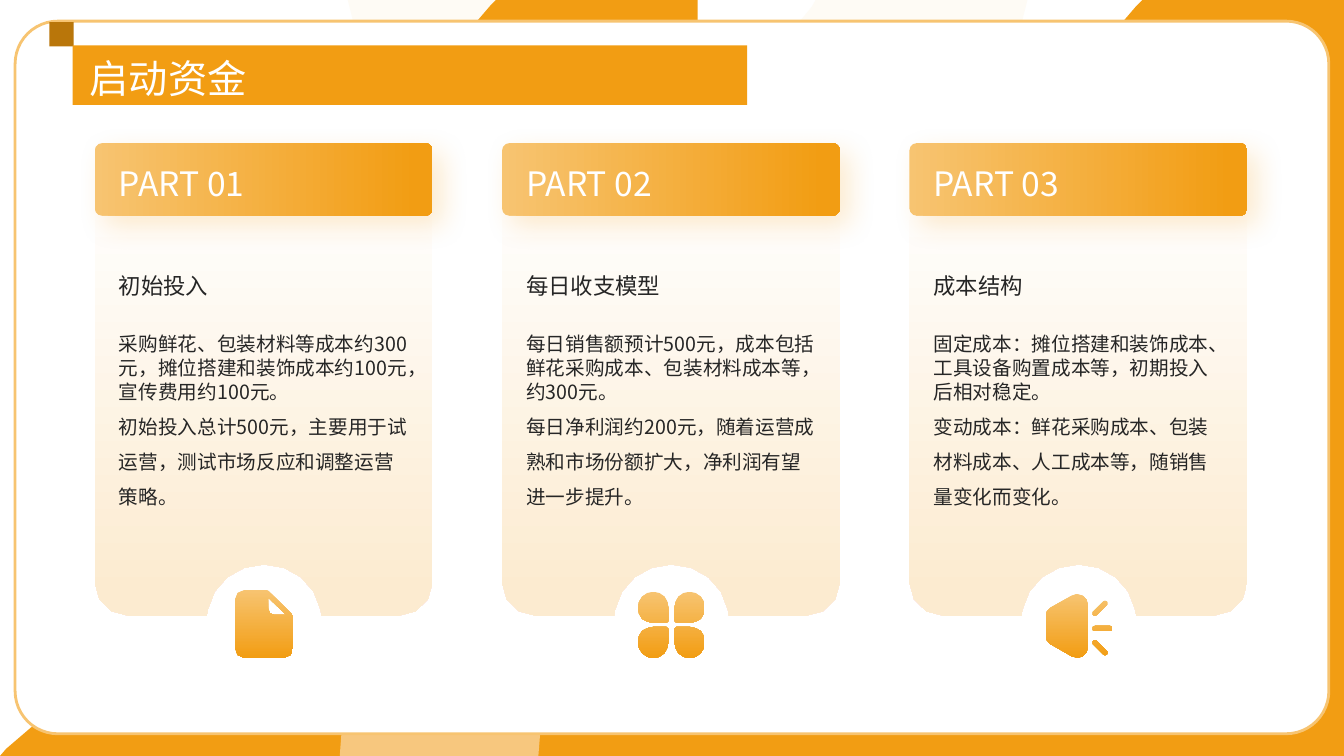
"""Build the start-up funding slide with three illustrated cards."""
import math
from dataclasses import dataclass

from lxml import etree
from pptx import Presentation
from pptx import util as u
from pptx.dml.color import RGBColor
from pptx.enum import shapes, text
from pptx.oxml.ns import qn

Contour = list[tuple[float, ...]]


@dataclass(frozen=True)
class Theme:
    font: str = "Noto Sans CJK SC"
    orange: str = "F29D13"
    amber: str = "F7C471"
    cream: str = "FCEBD0"
    mist: str = "FEFBF5"
    peach: str = "F7C77E"
    brown: str = "B9760A"
    white: str = "FFFFFF"
    ink: str = "262626"
    title: float = 28
    label: float = 24
    heading: float = 16
    body: float = 14


@dataclass(frozen=True)
class Card:
    label: str
    heading: str
    body: tuple[str, str]
    icon: list[Contour]


T = Theme()
CARD_LEFT, CARD_PITCH, CARD_W = 0.94, 4.04, 3.35
BAND_PITCH = 6.41

BAND_BOTTOM: Contour = [
    (3.75, 5.9), (4.92, 5.9, 6, 6.29, 6.87, 6.94), (6.92, 6.97), (6.92, 7.5),
    (0, 7.5), (0.06, 7.43), (1, 6.49, 2.31, 5.9, 3.75, 5.9)]
BAND_SIDE: Contour = [
    (4.92, 0), (6.92, 0), (6.92, 7.5), (4.92, 7.5), (4.86, 7.44),
    (3.92, 6.5, 3.33, 5.19, 3.33, 3.75), (3.33, 2.31, 3.92, 1, 4.86, 0.06)]
ARC_TOP: Contour = [
    (3.45, 0), (5.55, 0), (5.59, 0.07), (5.78, 0.3),
    (6.35, 0.87, 7.28, 0.87, 7.86, 0.3), (8.05, 0.07),
    (8.09, 0), (10.19, 0), (10.13, 0.24), (9.97, 0.77, 9.68, 1.28, 9.26, 1.7),
    (7.91, 3.05, 5.73, 3.05, 4.38, 1.7), (3.96, 1.28, 3.67, 0.77, 3.51, 0.24)]
ARC_BOTTOM: Contour = [
    (6.82, 4.05), (7.7, 4.05, 8.59, 4.38, 9.26, 5.06),
    (9.93, 5.73, 10.27, 6.62, 10.27, 7.5), (8.29, 7.5),
    (8.29, 7.12, 8.15, 6.75, 7.86, 6.46), (7.28, 5.88, 6.35, 5.88, 5.78, 6.46),
    (5.49, 6.75, 5.34, 7.12, 5.34, 7.5), (3.37, 7.5),
    (3.37, 6.62, 3.7, 5.73, 4.38, 5.06), (5.05, 4.38, 5.93, 4.05, 6.82, 4.05)]
PANEL: Contour = [
    (0.34, 1.85), (3.01, 1.85), (3.2, 1.85, 3.35, 2, 3.35, 2.18), (3.35, 5.78),
    (3.35, 5.96, 3.2, 6.11, 3.01, 6.11), (2.25, 6.11), (2.24, 6.05),
    (2.19, 5.79, 1.96, 5.6, 1.68, 5.6), (1.4, 5.6, 1.17, 5.79, 1.12, 6.05),
    (1.11, 6.11), (0.34, 6.11), (0.15, 6.11, 0, 5.96, 0, 5.78), (0, 2.18),
    (0, 2, 0.15, 1.85, 0.34, 1.85)]
FILE: list[Contour] = [
    [(1.72, 5.93), (1.72, 6.04), (1.72, 6.08, 1.75, 6.1, 1.78, 6.1), (1.9, 6.1)],
    [(1.49, 5.85), (1.7, 5.85), (1.72, 5.86), (1.97, 6.11), (1.97, 6.42),
     (1.97, 6.48, 1.93, 6.53, 1.87, 6.53), (1.49, 6.53),
     (1.43, 6.53, 1.39, 6.48, 1.39, 6.42), (1.39, 5.96),
     (1.39, 5.9, 1.43, 5.85, 1.49, 5.85)]]
PETAL: Contour = [
    (0.05, 0.02), (0.18, 0.02), (0.22, 0.02, 0.26, 0.04, 0.29, 0.06),
    (0.32, 0.09, 0.33, 0.13, 0.33, 0.17), (0.33, 0.21, 0.32, 0.25, 0.29, 0.28),
    (0.26, 0.31, 0.22, 0.33, 0.18, 0.33), (0.14, 0.33, 0.1, 0.31, 0.07, 0.28),
    (0.05, 0.25, 0.03, 0.21, 0.03, 0.17), (0.03, 0.04)]
RAY: Contour = [
    (0.2, -0.27), (0.22, -0.26), (0.22, -0.23), (0.12, -0.13), (0.1, -0.12),
    (0.08, -0.13), (0.08, -0.16), (0.18, -0.26)]
MIDDLE_RAY: Contour = [
    (1.84, 6.21), (1.99, 6.21), (2.01, 6.22), (2.01, 6.25), (1.99, 6.26),
    (1.84, 6.26), (1.82, 6.25), (1.82, 6.22)]
HORN: Contour = [
    (1.66, 5.89), (1.72, 5.91), (1.75, 5.93, 1.77, 5.96, 1.77, 6), (1.77, 6.42),
    (1.77, 6.46, 1.75, 6.49, 1.72, 6.51), (1.69, 6.53, 1.65, 6.53, 1.61, 6.51),
    (1.4, 6.39), (1.37, 6.37, 1.35, 6.34, 1.35, 6.3), (1.35, 6.12),
    (1.35, 6.08, 1.37, 6.05, 1.4, 6.03), (1.61, 5.91)]


def place(contour: Contour, dx: float, dy: float = 0, sx: int = 1, sy: int = 1) -> Contour:
    """Mirror a contour by its signs, then shift it."""
    return [tuple(v * sy + dy if i % 2 else v * sx + dx for i, v in enumerate(seg))
            for seg in contour]


CLOVER = [place(PETAL, 1.68, 6.2, sx, sy) for sx in (-1, 1) for sy in (-1, 1)]
SPEAKER = [HORN, MIDDLE_RAY] + [place(RAY, 1.74, 6.23, 1, sy) for sy in (1, -1)]

CARDS = [
    Card("PART 01", "初始投入",
         ("采购鲜花、包装材料等成本约300元，摊位搭建和装饰成本约100元，宣传费用约100元。",
          "初始投入总计500元，主要用于试运营，测试市场反应和调整运营策略。"), FILE),
    Card("PART 02", "每日收支模型",
         ("每日销售额预计500元，成本包括鲜花采购成本、包装材料成本等，约300元。",
          "每日净利润约200元，随着运营成熟和市场份额扩大，净利润有望进一步提升。"), CLOVER),
    Card("PART 03", "成本结构",
         ("固定成本：摊位搭建和装饰成本、工具设备购置成本等，初期投入后相对稳定。",
          "变动成本：鲜花采购成本、包装材料成本、人工成本等，随销售量变化而变化。"), SPEAKER),
]


def flatten(contour: Contour) -> list[tuple[int, int]]:
    """Turn lines and cubic curves into points, with more points on longer curves."""
    pts = [contour[0]]
    for seg in contour[1:]:
        if len(seg) == 2:
            pts.append(seg)
            continue
        x0, y0 = pts[-1]
        x1, y1, x2, y2, x3, y3 = seg
        steps = min(5, math.ceil(4 * math.sqrt(math.hypot(x3 - x0, y3 - y0))))
        for k in range(1, steps + 1):
            t = k / steps
            a, b, c, d = (1 - t) ** 3, 3 * t * (1 - t) ** 2, 3 * t * t * (1 - t), t ** 3
            pts.append((a * x0 + b * x1 + c * x2 + d * x3, a * y0 + b * y1 + c * y2 + d * y3))
    return [(u.Inches(x), u.Inches(y)) for x, y in pts]


def paint(sp, *colors: str, angle: float = 0, end: float = 0.95) -> None:
    """Fill a shape with one colour or a two-colour gradient, without line or shadow."""
    sp.shadow.inherit = False
    sp.line.fill.background()
    if len(colors) == 1:
        sp.fill.solid()
        sp.fill.fore_color.rgb = RGBColor.from_string(colors[0])
        return
    sp.fill.gradient()
    sp.fill.gradient_angle = angle
    for stop, color, pos in zip(sp.fill.gradient_stops, colors, (0, end)):
        stop.color.rgb = RGBColor.from_string(color)
        stop.position = pos


def outline(s, contours: list[Contour], *colors: str, angle: float = 0, end: float = 0.95) -> None:
    """Draw contours as one painted freeform."""
    first, *others = [flatten(c) for c in contours]
    fb = s.shapes.build_freeform(*first[0], scale=1.0)
    fb.add_line_segments(first[1:], close=True)
    for pts in others:
        fb.move_to(*pts[0])
        fb.add_line_segments(pts[1:], close=True)
    paint(fb.convert_to_shape(), *colors, angle=angle, end=end)


def block(s, kind, x: float, y: float, w: float, h: float, *colors: str):
    """Draw a painted preset shape."""
    sp = s.shapes.add_shape(kind, u.Inches(x), u.Inches(y), u.Inches(w), u.Inches(h))
    paint(sp, *colors)
    return sp


def cast_shadow(sp) -> None:
    """Add a soft orange shadow to the lower right."""
    effects = sp._element.spPr.find(qn("a:effectLst"))
    shadow = etree.SubElement(effects, qn("a:outerShdw"), blurRad=str(u.Pt(20)),
                              dist=str(u.Pt(10)), dir="2700000", algn="tl", rotWithShape="0")
    color = etree.SubElement(shadow, qn("a:srgbClr"), val=T.orange)
    etree.SubElement(color, qn("a:alpha"), val="20000")


def write(sp, lines: tuple[str, ...], size: float, color: str, spacings: tuple, middle: bool) -> None:
    """Set the paragraphs of a shape, each with its own line spacing."""
    tf = sp.text_frame
    tf.word_wrap = True
    tf.auto_size = text.MSO_AUTO_SIZE.NONE
    tf.margin_left = tf.margin_right = tf.margin_top = tf.margin_bottom = 0
    tf.vertical_anchor = text.MSO_ANCHOR.MIDDLE if middle else text.MSO_ANCHOR.TOP
    for i, (line, spacing) in enumerate(zip(lines, spacings)):
        p = tf.add_paragraph() if i else tf.paragraphs[0]
        p.text = line
        p.alignment = text.PP_ALIGN.LEFT
        p.line_spacing = spacing
        p.font.size = u.Pt(size)
        p.font.name = T.font
        p.font.color.rgb = RGBColor.from_string(color)
        etree.SubElement(p._p.pPr.find(qn("a:defRPr")), qn("a:ea"), typeface=T.font)


def textbox(s, x: float, y: float, w: float, h: float):
    """Add an empty text box."""
    return s.shapes.add_textbox(u.Inches(x), u.Inches(y), u.Inches(w), u.Inches(h))


def draw_backdrop(s) -> None:
    """Draw the coloured bands and the white panel over them."""
    outline(s, [ARC_TOP], T.mist)
    for dx in (0, BAND_PITCH):
        outline(s, [place(BAND_BOTTOM, dx)], T.orange)
        outline(s, [place(BAND_SIDE, dx)], T.orange)
        if not dx:
            outline(s, [ARC_BOTTOM], T.peach)
    sp = block(s, shapes.MSO_SHAPE.ROUNDED_RECTANGLE, 0.15, 0.21, 13.03, 7.07, T.white)
    sp.adjustments[0] = 0.06
    sp.line.color.rgb = RGBColor.from_string(T.amber)
    sp.line.width = u.Pt(2)


def draw_card(s, card: Card, x: float) -> None:
    """Draw one card with its label, texts and icon."""
    outline(s, [place(PANEL, x)], T.white, T.cream, angle=270)
    sp = block(s, shapes.MSO_SHAPE.ROUNDED_RECTANGLE, x, 1.42, CARD_W, 0.72, T.amber, T.orange)
    sp.adjustments[0] = 0.1
    cast_shadow(sp)
    left = x + 0.24
    write(textbox(s, left, 1.59, 2.88, 0.33), (card.label,), T.label, T.white, (u.Pt(30.5),), False)
    write(textbox(s, left, 2.38, 2.87, 0.86), (card.heading,), T.heading, T.ink, (1.2,), True)
    write(textbox(s, left, 3.29, 2.87, 2.31), card.body, T.body, T.ink, (u.Pt(17), u.Pt(25)), False)
    outline(s, [place(c, x) for c in card.icon], T.amber, T.orange, angle=270, end=1)


def draw_title(s) -> None:
    """Draw the title bar and bring the title in front of it."""
    block(s, shapes.MSO_SHAPE.RECTANGLE, 0.49, 0.22, 0.24, 0.24, T.brown)
    block(s, shapes.MSO_SHAPE.RECTANGLE, 0.72, 0.45, 6.69, 0.59, T.orange)
    sp = s.shapes.title
    sp.left, sp.top, sp.width, sp.height = map(u.Inches, (0.89, 0.49, 11.7, 0.51))
    write(sp, ("启动资金",), T.title, T.white, (1.1,), True)
    s.shapes._spTree.append(sp._element)


def main() -> None:
    """Build and save the slide."""
    prs = Presentation()
    prs.slide_width, prs.slide_height = u.Inches(13.33), u.Inches(7.5)
    s = prs.slides.add_slide(prs.slide_layouts[5])
    draw_backdrop(s)
    for i, card in enumerate(CARDS):
        draw_card(s, card, CARD_LEFT + i * CARD_PITCH)
    draw_title(s)
    prs.save("out.pptx")


if __name__ == "__main__":
    main()
